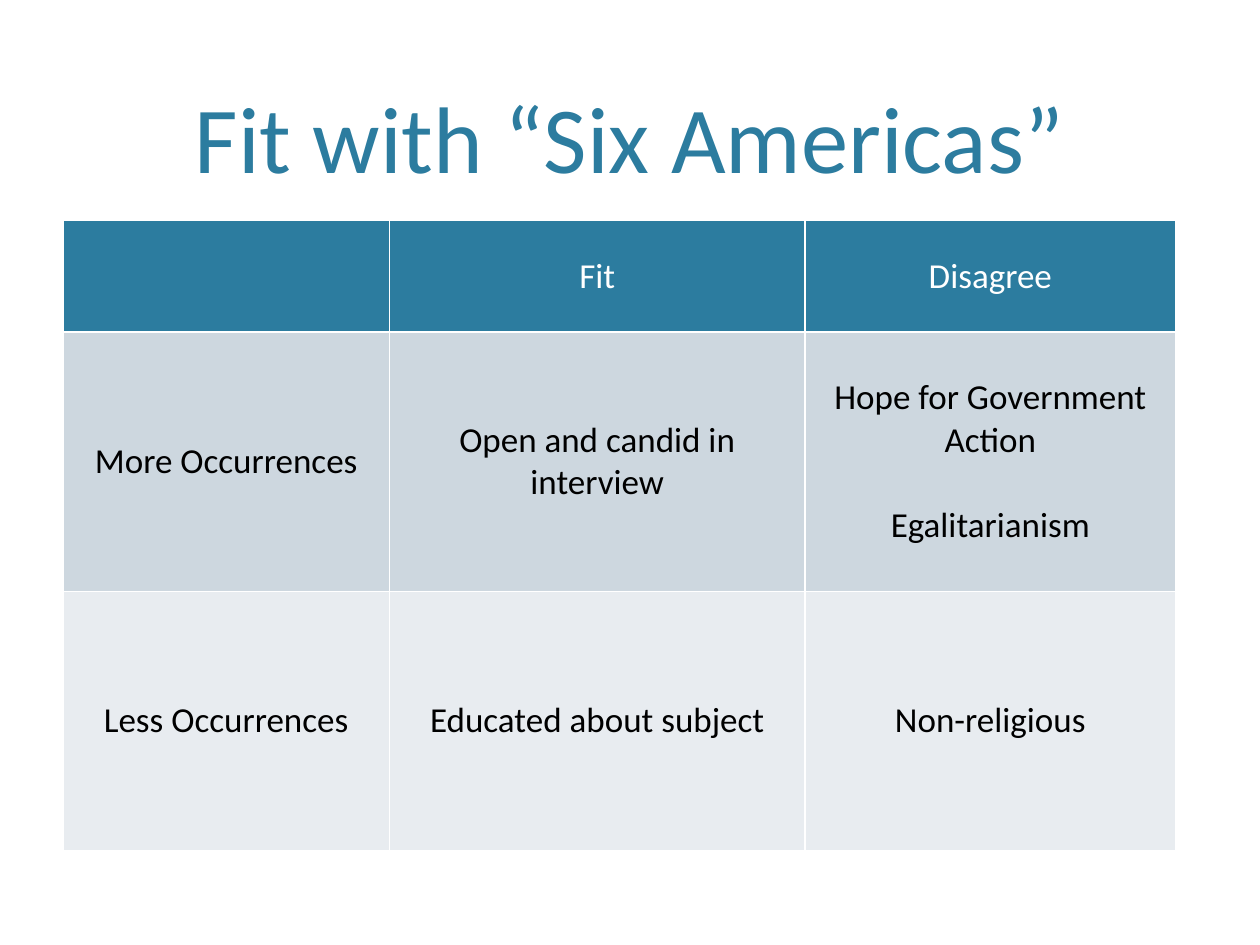
import pptx
import pptx.util
import pptx.dml.color
import pptx.enum.text
from pptx.util import Cm

COLORS = {
    "teal": "2C7C9F",
    "band_dark": "CDD7DF",
    "band_light": "E8ECF0",
    "white": "FFFFFF",
    "black": "000000",
}
FONT = "Calibri"


def rgb(name):
    return pptx.dml.color.RGBColor.from_string(COLORS[name])


def format_text(frame, size, color):
    for para in frame.paragraphs:
        para.alignment = pptx.enum.text.PP_ALIGN.CENTER
        for span in para.runs:
            span.font.name = FONT
            span.font.size = pptx.util.Pt(size)
            span.font.bold = False
            span.font.color.rgb = rgb(color)


deck = pptx.Presentation()
deck.slide_width, deck.slide_height = Cm(25.4), Cm(19.05)
page = deck.slides.add_slide(deck.slide_layouts[5])

# Title
title = page.shapes.title
title.left, title.top, title.width, title.height = Cm(1.52), Cm(0.3), Cm(22.35), Cm(3.71)
title.text_frame.text = "Fit with “Six Americas”"
title.text_frame.vertical_anchor = pptx.enum.text.MSO_ANCHOR.BOTTOM
format_text(title.text_frame, 54, "teal")

# Table: the built-in style supplies the white rules
rows = [
    ["", "Fit", "Disagree"],
    ["More Occurrences", "Open and candid in interview",
     "Hope for Government Action\nEgalitarianism"],
    ["Less Occurrences", "Educated about subject", "Non-religious"],
]
column_widths = [6.58, 8.38, 7.47]
row_heights = [2.24, 5.23, 5.23]
row_colors = [("teal", "white"), ("band_dark", "black"), ("band_light", "black")]

table = page.shapes.add_table(
    len(rows), len(column_widths), Cm(1.27), Cm(4.45),
    Cm(sum(column_widths)), Cm(sum(row_heights))).table
for column, width in zip(table.columns, column_widths):
    column.width = Cm(width)

for row, height, texts, (fill, ink) in zip(table.rows, row_heights, rows, row_colors):
    row.height = Cm(height)
    for cell, text in zip(row.cells, texts):
        cell.fill.solid()
        cell.fill.fore_color.rgb = rgb(fill)
        cell.vertical_anchor = pptx.enum.text.MSO_ANCHOR.MIDDLE
        cell.text_frame.text = text
        format_text(cell.text_frame, 20, ink)
        # Separate stacked entries by one line
        for para in cell.text_frame.paragraphs[1:]:
            para.space_before = pptx.util.Pt(24)

deck.save("out.pptx")
